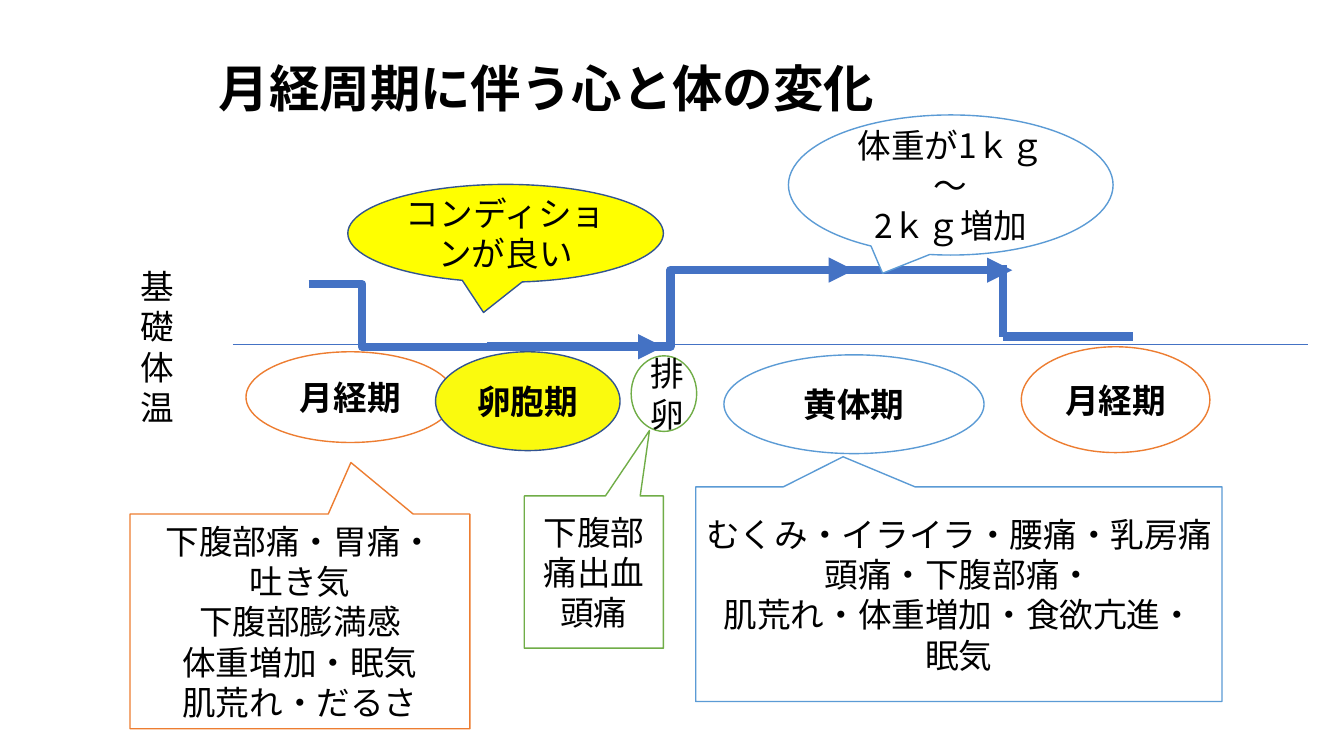
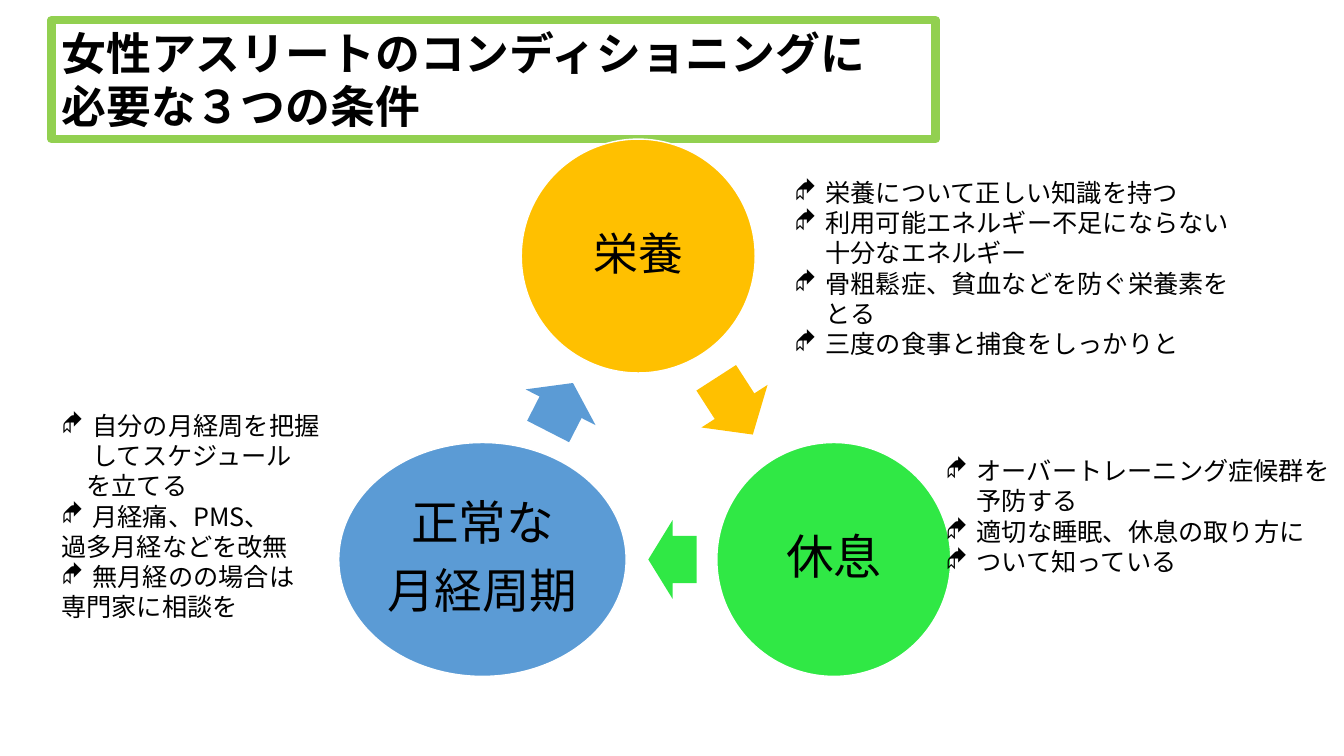
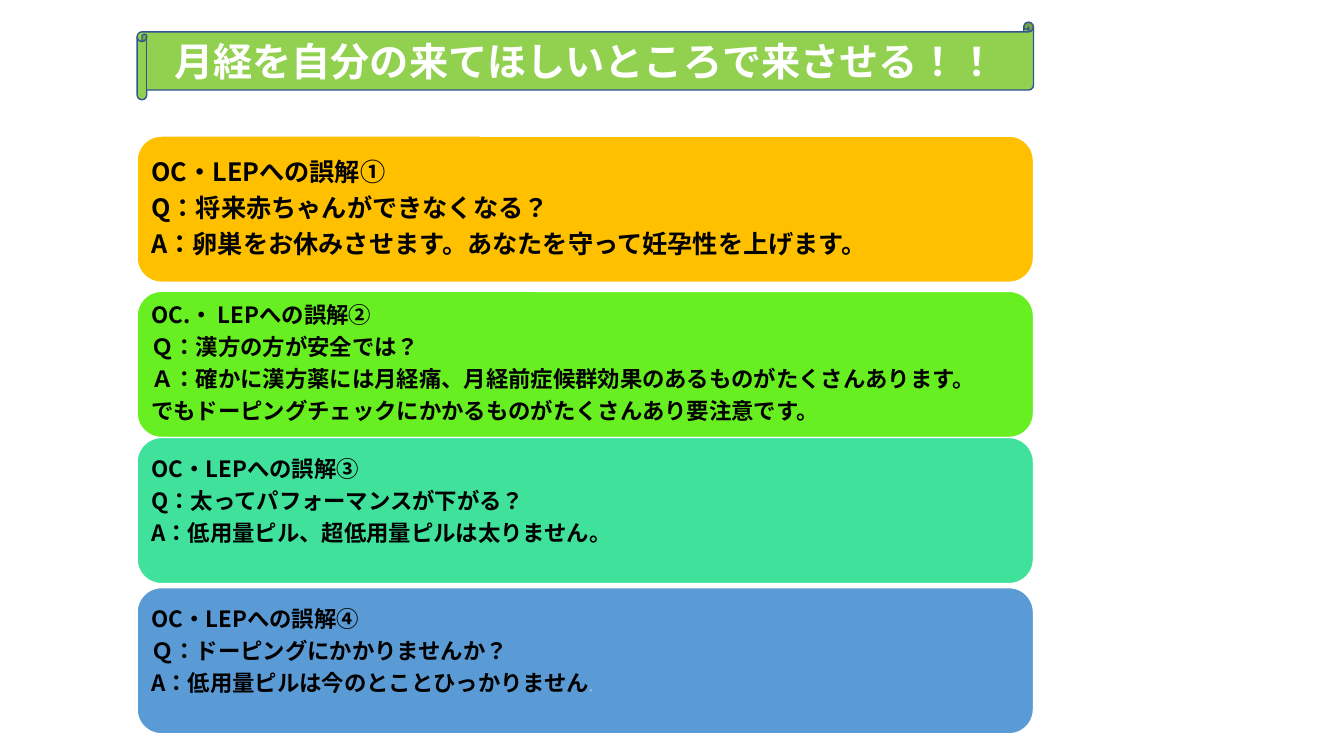
from lxml.etree import SubElement
from pptx import Presentation
from pptx.dml.color import RGBColor
from pptx.enum.lang import MSO_LANGUAGE_ID
from pptx.enum.shapes import MSO_CONNECTOR, MSO_SHAPE
from pptx.enum.text import MSO_ANCHOR, PP_ALIGN
from pptx.oxml.ns import qn
from pptx.util import Emu, Pt

PX = 9144  # 100 px to the inch
FONT = "Noto Sans CJK JP"
TITLE_ONLY = 5

BLACK = RGBColor(0x00, 0x00, 0x00)
WHITE = RGBColor(0xFF, 0xFF, 0xFF)
NAVY = RGBColor(0x32, 0x54, 0x91)
BLUE = RGBColor(0x44, 0x72, 0xC4)
SKY = RGBColor(0x5B, 0x9B, 0xD5)
ORANGE = RGBColor(0xED, 0x7D, 0x31)
GREEN = RGBColor(0x70, 0xAD, 0x47)
LIME = RGBColor(0x92, 0xD0, 0x50)
YELLOW = RGBColor(0xFF, 0xFF, 0x00)
LEMON = RGBColor(0xFA, 0xFA, 0x0E)
AMBER = RGBColor(0xFF, 0xC0, 0x00)
REST_GREEN = RGBColor(0x30, 0xE8, 0x45)
CARD_GREEN = RGBColor(0x67, 0xEF, 0x21)
MINT = RGBColor(0x3F, 0xE1, 0x9B)

LEFT, CENTER = PP_ALIGN.LEFT, PP_ALIGN.CENTER
CYCLE_TEXT = {"line_spacing": 0.9}


def px(*lengths):
    return [Emu(n * PX) for n in lengths]


# Text
def add_run(p, text, size, bold=False, color=BLACK):
    r = p.add_run()
    r.text = text
    values = {"size": Pt(size), "bold": bold, "name": FONT,
              "language_id": MSO_LANGUAGE_ID.JAPANESE}
    for name, value in values.items():
        setattr(r.font, name, value)
    r.font.color.rgb = color
    SubElement(r.font._element, qn("a:ea"), typeface=FONT)


def write(tf, lines, size, align=LEFT, anchor=MSO_ANCHOR.TOP, bold=False,
          color=BLACK, inset=None, **para):
    frame = {"word_wrap": True, "vertical_anchor": anchor}
    if inset is not None:
        sides = ("margin_left", "margin_top", "margin_right", "margin_bottom")
        frame.update(zip(sides, px(*inset)))
    for name, value in frame.items():
        setattr(tf, name, value)
    for i, line in enumerate(lines):
        p = tf.add_paragraph() if i else tf.paragraphs[0]
        for name, value in {"alignment": align, **para}.items():
            setattr(p, name, value)
        add_run(p, line, size, bold, color)


def add_text(s, box, lines, size):
    sp = s.shapes.add_textbox(*px(*box))
    write(sp.text_frame, lines, size)
    return sp


def set_indent(p, margin, bullet=None):
    pPr = p._p.get_or_add_pPr()
    pPr.set("marL", str(margin * PX))
    if bullet:
        pPr.set("indent", str(-margin * PX))
        SubElement(pPr, qn("a:buFont"), typeface="Wingdings")
        SubElement(pPr, qn("a:buChar"), char=bullet)


def add_list(s, box, items):
    """Items starting with ◆ are bulleted; › marks an indented line."""
    sp = add_text(s, box, [item.lstrip("◆›") for item in items], 18)
    for p, item in zip(sp.text_frame.paragraphs, items):
        if item[0] == "◆":
            set_indent(p, 31, "◆")
        elif item[0] == "›":
            set_indent(p, 25)


# Shapes and lines
def add_shape(s, kind, box, fill, line=None, adj=(), rotation=0):
    sp = s.shapes.add_shape(kind, *px(*box))
    sp.shadow.inherit = False
    sp.rotation = rotation
    sp.fill.solid()
    sp.fill.fore_color.rgb = fill
    if line is None:
        sp.line.fill.background()
    else:
        sp.line.color.rgb = line
        sp.line.width = Pt(1)
    for i, value in enumerate(adj):
        sp.adjustments[i] = value
    return sp


def add_line(s, kind, ends, width=6, arrow=False, bend=None):
    cxn = s.shapes.add_connector(kind, *px(*ends))
    cxn.line.color.rgb = BLUE
    cxn.line.width = Pt(width)
    if arrow:
        SubElement(cxn.line._get_or_add_ln(), qn("a:tailEnd"), type="triangle")
    spPr = cxn._element.spPr
    SubElement(spPr, qn("a:effectLst"))
    if bend is not None:
        guides = spPr.find(qn("a:prstGeom")).find(qn("a:avLst"))
        SubElement(guides, qn("a:gd"), name="adj1", fmla=f"val {bend}")


# Slide with a title
def add_slide(prs, box, lines, size, **style):
    s = prs.slides.add_slide(prs.slide_layouts[TITLE_ONLY])
    title = s.shapes.title
    for name, value in zip(("left", "top", "width", "height"), px(*box)):
        setattr(title, name, value)
    write(title.text_frame, lines, size, bold=True, **style)
    return s


# Slide 1: cycle chart
def temperature_curve(s, x, y):
    straight, elbow = MSO_CONNECTOR.STRAIGHT, MSO_CONNECTOR.ELBOW
    add_text(s, (x, y, 78, 172), ["基礎体温"], 24)
    for kind, (x1, y1, x2, y2), style in (
            (straight, (102, 83, 1168, 83), {"width": 0.5}),
            (elbow, (177, 23, 529, 85), {"arrow": True, "bend": 15100}),
            (elbow, (354, 85, 718, 9), {"arrow": True}),
            (straight, (866, 75, 866, 4), {}),
            (straight, (709, 9, 875, 9), {"arrow": True}),
            (straight, (866, 75, 995, 75), {})):
        add_line(s, kind, (x + x1, y + y1, x + x2, y + y2), **style)


def phases(s, x, y):
    for dx, dy, w, h, name, fill, line, bold in (
            (0, 5, 207, 90, "月経期", WHITE, ORANGE, True),
            (188, 5, 183, 98, "卵胞期", LEMON, NAVY, True),
            (382, 9, 65, 75, "排卵", WHITE, GREEN, False),
            (474, 8, 258, 98, "黄体期", WHITE, SKY, True),
            (769, 0, 187, 105, "月経期", WHITE, ORANGE, True)):
        sp = add_shape(s, MSO_SHAPE.OVAL, (x + dx, y + dy, w, h), fill, line)
        write(sp.text_frame, [name], 24, CENTER, MSO_ANCHOR.MIDDLE, bold)


def callouts(s, x, y):
    rect, oval = MSO_SHAPE.RECTANGULAR_CALLOUT, MSO_SHAPE.OVAL_CALLOUT
    for kind, (dx, dy, w, h), adj, fill, line, lines in (
            (rect, (0, 396, 337, 213), (0.15, -0.74), WHITE, ORANGE,
             ["下腹部痛・胃痛・", "吐き気", "下腹部膨満感", "体重増加・眠気",
              "肌荒れ・だるさ"]),
            (oval, (216, 69, 313, 97), (-0.07, 0.81), YELLOW, NAVY,
             ["コンディションが良い"]),
            (rect, (391, 378, 138, 151), (0.4, -0.93), WHITE, GREEN,
             ["下腹部痛出血", "頭痛"]),
            (oval, (653, 0, 322, 139), (-0.21, 0.63), WHITE, SKY,
             ["体重が1ｋｇ～", "2ｋｇ増加"]),
            (rect, (561, 369, 522, 213), (-0.22, -0.64), WHITE, SKY,
             ["むくみ・イライラ・腰痛・乳房痛", "頭痛・下腹部痛・",
              "肌荒れ・体重増加・食欲亢進・", "眠気"])):
        sp = add_shape(s, kind, (x + dx, y + dy, w, h), fill, line, adj)
        write(sp.text_frame, lines, 24, CENTER, MSO_ANCHOR.MIDDLE)


def cycle_slide(prs):
    s = add_slide(prs, (207, 52, 851, 71), ["月経周期に伴う心と体の変化"], 36)
    temperature_curve(s, 129, 259)
    phases(s, 244, 344)
    callouts(s, 129, 114)


# Slide 2: three conditions
def condition_ring(s, x, y):
    for dx, dy, w, fill, size, lines in (
            (181, 0, 232, AMBER, 32, ["栄養"]),
            (375, 301, 232, REST_GREEN, 34, ["休息"]),
            (0, 301, 285, SKY, 34, ["正常な", "月経周期"])):
        sp = add_shape(s, MSO_SHAPE.OVAL, (x + dx, y + dy, w, 232), fill, WHITE)
        write(sp.text_frame, lines, size, CENTER, MSO_ANCHOR.MIDDLE,
              inset=(5, 5, 5, 5), line_spacing=0.9, space_after=Pt(0.35 * size))
    for dx, dy, w, fill, rotation in ((359, 226, 67, AMBER, 57.2),
                                      (307, 378, 48, REST_GREEN, 180),
                                      (193, 227, 54, SKY, 297.1)):
        add_shape(s, MSO_SHAPE.RIGHT_ARROW, (x + dx, y + dy, w, 78), fill,
                  adj=(0.6, 0.5), rotation=rotation)


def conditions_slide(prs):
    s = add_slide(prs, (51, 20, 877, 118),
                  ["女性アスリートのコンディショニングに", "必要な３つの条件"], 32)
    s.shapes.title.line.color.rgb = LIME
    s.shapes.title.line.width = Pt(6)
    condition_ring(s, 336, 138)
    add_list(s, (778, 171, 460, 192), [
        "◆栄養について正しい知識を持つ",
        "◆利用可能エネルギー不足にならない十分なエネルギー",
        "◆骨粗鬆症、貧血などを防ぐ栄養素をとる",
        "◆三度の食事と捕食をしっかりと"])
    add_list(s, (928, 447, 406, 131), [
        "◆オーバートレーニング症候群を予防する",
        "◆適切な睡眠、休息の取り方に",
        "◆ついて知っている"])
    add_list(s, (51, 402, 295, 222), [
        "◆自分の月経周を把握してスケジュール", "›を立てる",
        "◆月経痛、PMS、", "過多月経などを改無",
        "◆無月経のの場合は", "専門家に相談を"])


# Slide 3: questions and answers
def answer_cards(s, x, y, w, h):
    for dy, fill, size, bottom, lines in (
            (0, AMBER, 18, 7, [
                "OC・LEPへの誤解①", "Q：将来赤ちゃんができなくなる？",
                "A：卵巣をお休みさせます。あなたを守って妊孕性を上げます。"]),
            (154, CARD_GREEN, 16, 7, [
                "OC.・ LEPへの誤解②", "Ｑ：漢方の方が安全では？",
                "Ａ：確かに漢方薬には月経痛、月経前症候群効果のあるものがたくさんあります。",
                "でもドーピングチェックにかかるものがたくさんあり要注意です。"]),
            (299, MINT, 16, 23, [
                "OC・LEPへの誤解③", "Q：太ってパフォーマンスが下がる？",
                "A：低用量ピル、超低用量ピルは太りません。"]),
            (448, SKY, 16, 23, [
                "OC・LEPへの誤解④", "Ｑ：ドーピングにかかりませんか？",
                "A：低用量ピルは今のとことひっかりません"])):
        sp = add_shape(s, MSO_SHAPE.ROUNDED_RECTANGLE, (x, y + dy, w, h),
                       fill, WHITE)
        write(sp.text_frame, lines, size, anchor=MSO_ANCHOR.MIDDLE, bold=True,
              inset=(7, 7, 7, bottom), line_spacing=0.9,
              space_after=Pt(0.35 * size))
    # Small full stop closing the last answer
    add_run(sp.text_frame.paragraphs[-1], "。", 5, color=WHITE)


def answers_slide(prs):
    banner = (136, 22, 889, 77)
    s = add_slide(prs, banner, ["月経を自分の来てほしいところで来させる！！"], 28,
                  align=CENTER, anchor=MSO_ANCHOR.MIDDLE, color=WHITE)
    scroll = add_shape(s, MSO_SHAPE.HORIZONTAL_SCROLL, banner, LIME, NAVY)
    s.shapes.title._element.addprevious(scroll._element)
    answer_cards(s, 136, 135, 889, 145)


def main():
    prs = Presentation()
    prs.slide_width, prs.slide_height = px(1333, 750)
    cycle_slide(prs)
    conditions_slide(prs)
    answers_slide(prs)
    prs.save("out.pptx")


if __name__ == "__main__":
    main()
